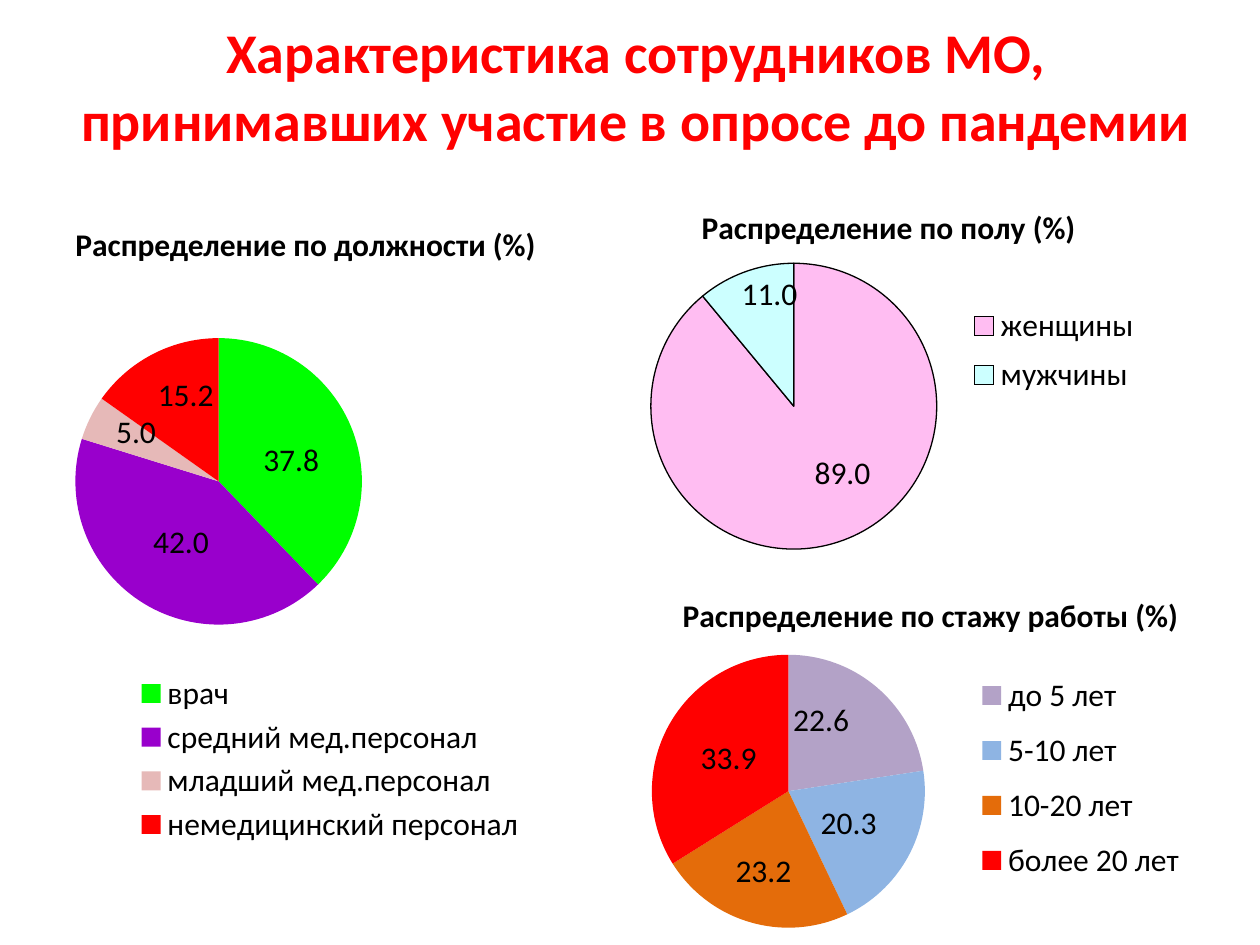
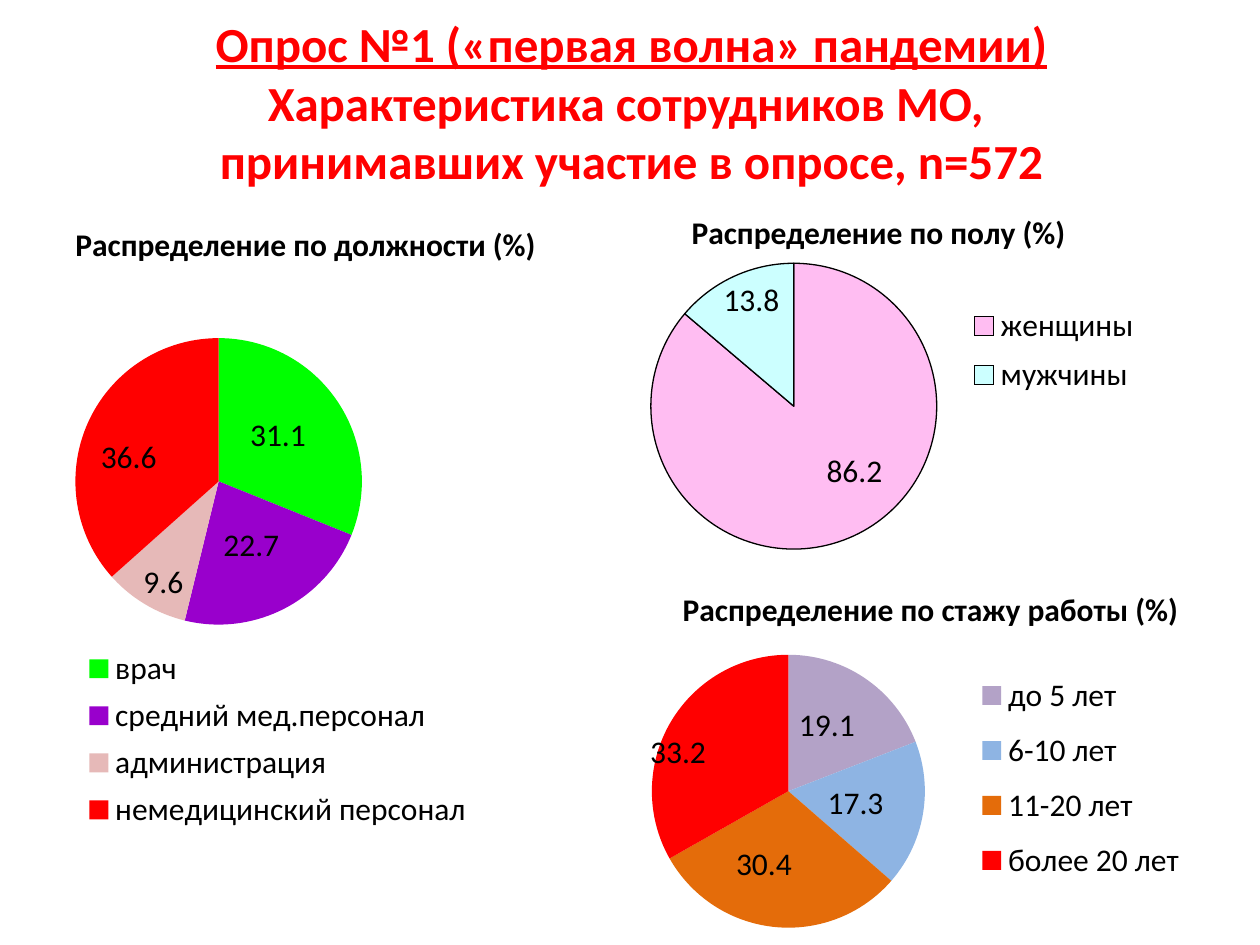
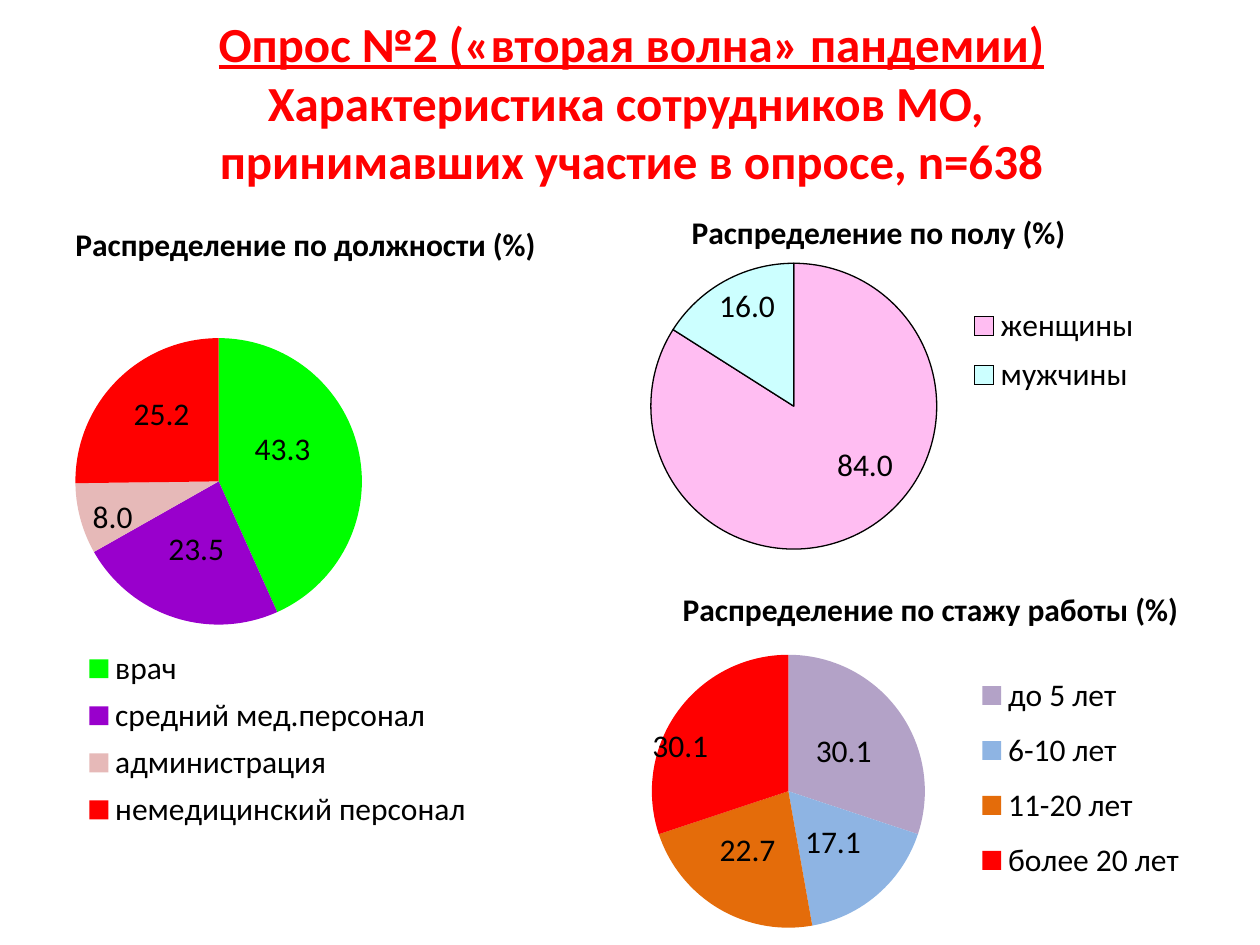
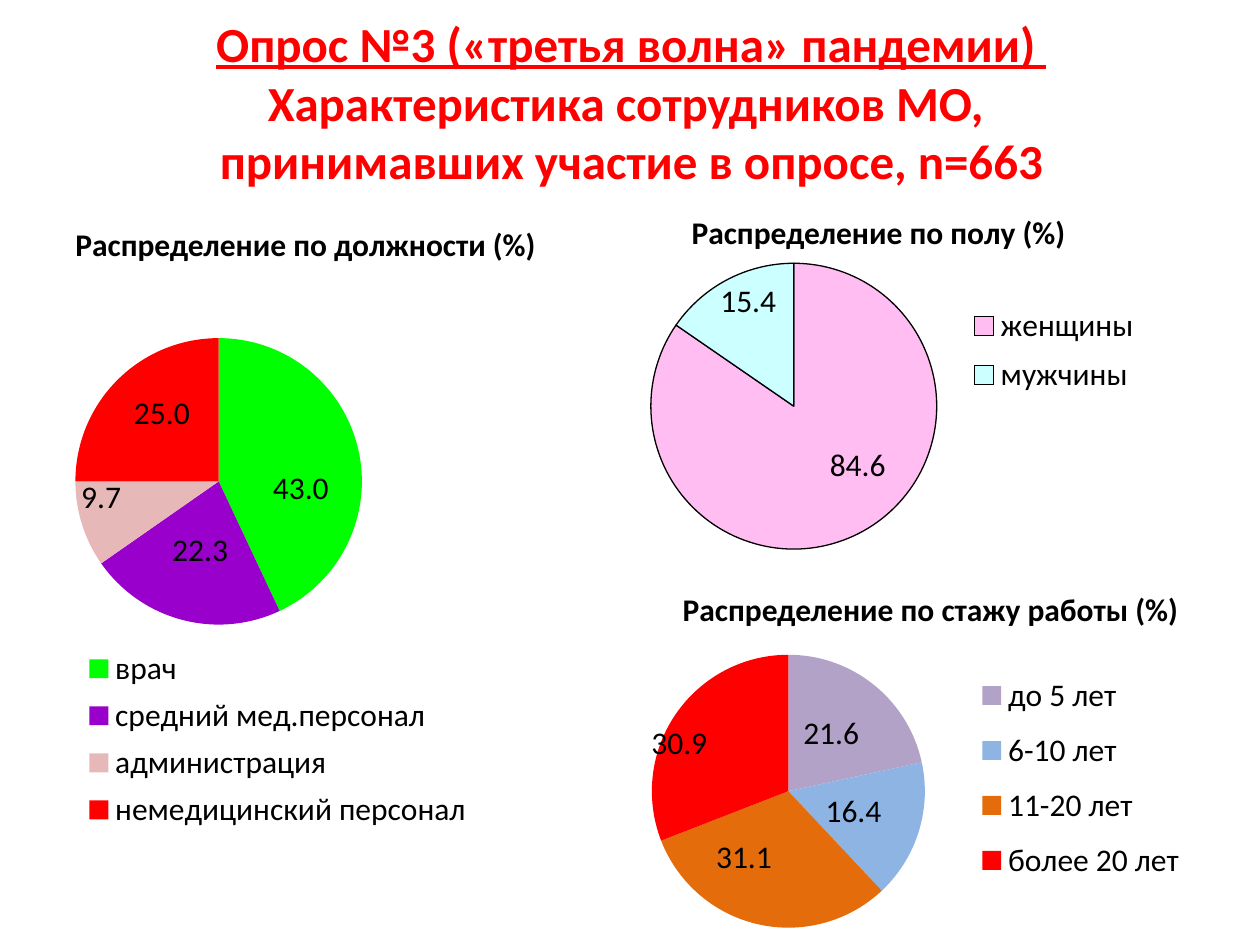
from pptx import Presentation
from pptx.chart.data import CategoryChartData
from pptx.dml.color import RGBColor
from pptx.enum.chart import XL_CHART_TYPE, XL_LABEL_POSITION, XL_LEGEND_POSITION
from pptx.enum.text import MSO_ANCHOR, PP_ALIGN
from pptx.oxml import parse_xml
from pptx.oxml.ns import nsdecls, qn
from pptx.util import Inches, Pt

FONT = "Calibri"
RED, BLACK = "FF0000", "000000"
NUMBER_FORMAT = "0.0"

# Frames are left, top, width, height in inches;
# plot and legend boxes are the same as fractions of the chart frame.
PANELS = {
    "position": {
        "heading": "Распределение по должности (%)",
        "frame": (0.13, 2.27, 4.88, 4.47),
        "plot": (0.096, 0.026, 0.466, 0.642),
        "colors": ["00FF00", "9900CC", "E6B9B8", RED],
        "outline": None,
    },
    "gender": {
        "heading": "Распределение по полу (%)",
        "frame": (5, 1.9, 4.88, 2.98),
        "plot": (0.034, 0.063, 0.465, 0.763),
        "colors": ["FFBDF2", "CCFFFF"],
        "outline": BLACK,
    },
    "experience": {
        "heading": "Распределение по стажу работы (%)",
        "frame": (5.16, 4.22, 4.65, 3.76),
        "plot": (0.003, 0.227, 0.466, 0.642),
        "colors": ["B3A2C7", "8EB4E3", "E46C0A", RED],
        "outline": None,
    },
}

# Groups that differ between the survey before the pandemic and its waves
BEFORE = {
    "title_frame": (0.3, 0.05, 9.5, 1.25),
    "title_size": 32,
    "headings": {"position": (0.5, 1.74, 9, 0.35),
                 "gender": (5.47, 1.6, 3.19, 0.4),
                 "experience": (5.32, 4.68, 4.17, 0.4)},
    "legends": {"position": (0.19, 0.68, 0.64, 0.32),
                "gender": (0.55, 0.15, 0.28, 0.29),
                "experience": (0.55, 0.27, 0.37, 0.5)},
    "groups": {
        "position": ["врач", "средний мед.персонал", "младший мед.персонал",
                     "немедицинский персонал"],
        "gender": ["женщины", "мужчины"],
        "experience": ["до 5 лет", "5-10 лет", "10-20 лет", "более 20 лет"],
    },
}
WAVE = {
    "title_frame": (0.26, 0.18, 9.5, 1.25),
    "title_size": 28,
    "headings": {"position": (0.5, 1.74, 9, 0.35),
                 "gender": (5.39, 1.64, 3.19, 0.4),
                 "experience": (5.32, 4.63, 4.17, 0.4)},
    "legends": {**BEFORE["legends"], "position": (0.1, 0.63, 0.65, 0.35)},
    "groups": {
        "position": ["врач", "средний мед.персонал", "администрация",
                     "немедицинский персонал"],
        "gender": ["женщины", "мужчины"],
        "experience": ["до 5 лет", "6-10 лет", "11-20 лет", "более 20 лет"],
    },
}

# shares: per panel, the values and the label shifts {point: (x, y)}
SURVEYS = [
    {
        "kind": BEFORE,
        "wave": "",
        "title": "Характеристика сотрудников МО, принимавших участие в опросе до пандемии",
        "shares": {
            "position": ([37.8, 42, 5, 15.2],
                         {0: (0.01, 0.01), 2: (-0.03, -0.03), 3: (0, -0.04)}),
            "gender": ([89, 11], {0: (0.04, 0), 1: (0, -0.12)}),
            "experience": ([22.6, 20.3, 23.2, 33.9],
                           {0: (-0.02, -0.04), 2: (-0.01, 0.03)}),
        },
    },
    {
        "kind": WAVE,
        "wave": "Опрос №1 («первая волна» пандемии) ",
        "title": "Характеристика сотрудников МО, \vпринимавших участие в опросе, n=572",
        "shares": {
            "position": ([31.1, 22.7, 9.6, 36.6],
                         {0: (0, -0.01), 2: (-0.03, 0.07), 3: (-0.04, 0.01)}),
            "gender": ([86.2, 13.8], {0: (0.05, 0), 1: (-0.02, -0.11)}),
            "experience": ([19.1, 17.3, 30.4, 33.2],
                           {0: (0, -0.02), 2: (-0.03, 0.01), 3: (-0.09, -0.01)}),
        },
    },
    {
        "kind": WAVE,
        "wave": "Опрос №2 («вторая волна» пандемии) ",
        "title": "Характеристика сотрудников МО, \vпринимавших участие в опросе, n=638",
        "shares": {
            "position": ([43.3, 23.5, 8, 25.2],
                         {0: (-0.01, -0.03), 2: (-0.06, 0.03), 3: (-0.01, -0.03)}),
            "gender": ([84, 16], {0: (0.06, -0.01), 1: (-0.02, -0.1)}),
            "experience": ([30.1, 17.1, 22.7, 30.1],
                           {2: (-0.01, 0), 3: (-0.09, -0.01)}),
        },
    },
    {
        "kind": WAVE,
        "wave": "Опрос №3 («третья волна» пандемии) \v",
        "title": "Характеристика сотрудников МО, \vпринимавших участие в опросе, n=663",
        "shares": {
            "position": ([43, 22.3, 9.7, 25],
                         {0: (0.02, 0.04), 2: (-0.08, -0.01), 3: (-0.01, -0.03)}),
            "gender": ([84.6, 15.4], {0: (0.05, -0.01), 1: (-0.02, -0.11)}),
            "experience": ([21.6, 16.4, 31.1, 30.9],
                           {0: (0, -0.01), 2: (-0.05, 0), 3: (-0.09, -0.02)}),
        },
    },
]


def rgb(color):
    return RGBColor.from_string(color)


def inches(frame):
    return [Inches(length) for length in frame]


def add_text(slide, frame, text, underlined="", size=18, color=BLACK,
             align=PP_ALIGN.LEFT, anchor=MSO_ANCHOR.TOP, wrap=True):
    """Add bold text, with an optional underlined part before it."""
    text_frame = slide.shapes.add_textbox(*inches(frame)).text_frame
    text_frame.word_wrap = wrap
    text_frame.vertical_anchor = anchor
    paragraph = text_frame.paragraphs[0]
    paragraph.alignment = align
    for part, underline in ((underlined, True), (text, False)):
        for number, line in enumerate(part.split("\v")):
            if number:
                paragraph.add_line_break()
            if not line:
                continue
            run = paragraph.add_run()
            run.text = line
            run.font.name = FONT
            run.font.size = Pt(size)
            run.font.bold = True
            run.font.underline = underline
            run.font.color.rgb = rgb(color)


def set_layout(parent, index, box, target=""):
    """Give a chart part a manual layout: x, y and, if present, width, height."""
    for old in parent.findall(qn("c:layout")):
        parent.remove(old)
    modes = '<c:xMode val="edge"/><c:yMode val="edge"/>' if len(box) == 4 else ""
    if target:
        modes = f'<c:layoutTarget val="{target}"/>' + modes
    sizes = "".join(f'<c:{side} val="{value}"/>' for side, value in zip("xywh", box))
    parent.insert(index, parse_xml(
        f'<c:layout {nsdecls("c")}><c:manualLayout>{modes}{sizes}'
        '</c:manualLayout></c:layout>'))


def add_labels(series, shifts):
    labels = series.data_labels
    labels.show_value = True
    labels.number_format = NUMBER_FORMAT
    labels.number_format_is_linked = False
    labels.position = XL_LABEL_POSITION.CENTER
    for index in shifts:
        series.points[index].data_label.position = XL_LABEL_POSITION.CENTER
    series_labels = series._element.find(qn("c:dLbls"))
    for leader in series_labels.findall(qn("c:showLeaderLines")):
        leader.set("val", "0")
    for label in series_labels.findall(qn("c:dLbl")):
        index = int(label.find(qn("c:idx")).get("val"))
        set_layout(label, 1, shifts[index])
        label.insert(2, parse_xml(
            f'<c:numFmt {nsdecls("c")} formatCode="{NUMBER_FORMAT}" sourceLinked="0"/>'))


def add_pie(slide, panel, groups, shares, shifts, legend_box):
    data = CategoryChartData()
    data.categories = groups
    data.add_series("Series 1", shares)
    chart = slide.shapes.add_chart(
        XL_CHART_TYPE.PIE, *inches(panel["frame"]), data).chart
    chart.has_title = False
    chart.font.name = FONT
    chart.font.size = Pt(18)
    chart.font.color.rgb = rgb(BLACK)
    chart.has_legend = True
    chart.legend.position = XL_LEGEND_POSITION.BOTTOM
    chart.legend.include_in_layout = False
    set_layout(chart.legend._element, 1, legend_box)
    plot_area = chart._chartSpace.chart.plotArea
    set_layout(plot_area, 0, panel["plot"], target="inner")

    chart.plots[0].vary_by_categories = True
    series = chart.plots[0].series[0]
    for index, color in enumerate(panel["colors"]):
        sector = series.points[index].format
        sector.fill.solid()
        sector.fill.fore_color.rgb = rgb(color)
        if panel["outline"]:
            sector.line.color.rgb = rgb(panel["outline"])
            sector.line.width = Pt(0.75)
        else:
            sector.line.fill.background()
    add_labels(series, shifts)


def add_survey(deck, survey):
    slide = deck.slides.add_slide(deck.slide_layouts[6])
    kind = survey["kind"]
    add_text(slide, kind["title_frame"], survey["title"], underlined=survey["wave"],
             size=kind["title_size"], color=RED,
             align=PP_ALIGN.CENTER, anchor=MSO_ANCHOR.MIDDLE)
    for name, panel in PANELS.items():
        shares, shifts = survey["shares"][name]
        add_pie(slide, panel, kind["groups"][name], shares, shifts,
                kind["legends"][name])
        add_text(slide, kind["headings"][name], panel["heading"],
                 wrap=name == "position")


def main():
    deck = Presentation()
    deck.slide_width, deck.slide_height = Inches(10), Inches(7.5)
    for survey in SURVEYS:
        add_survey(deck, survey)
    deck.save("out.pptx")


if __name__ == "__main__":
    main()
